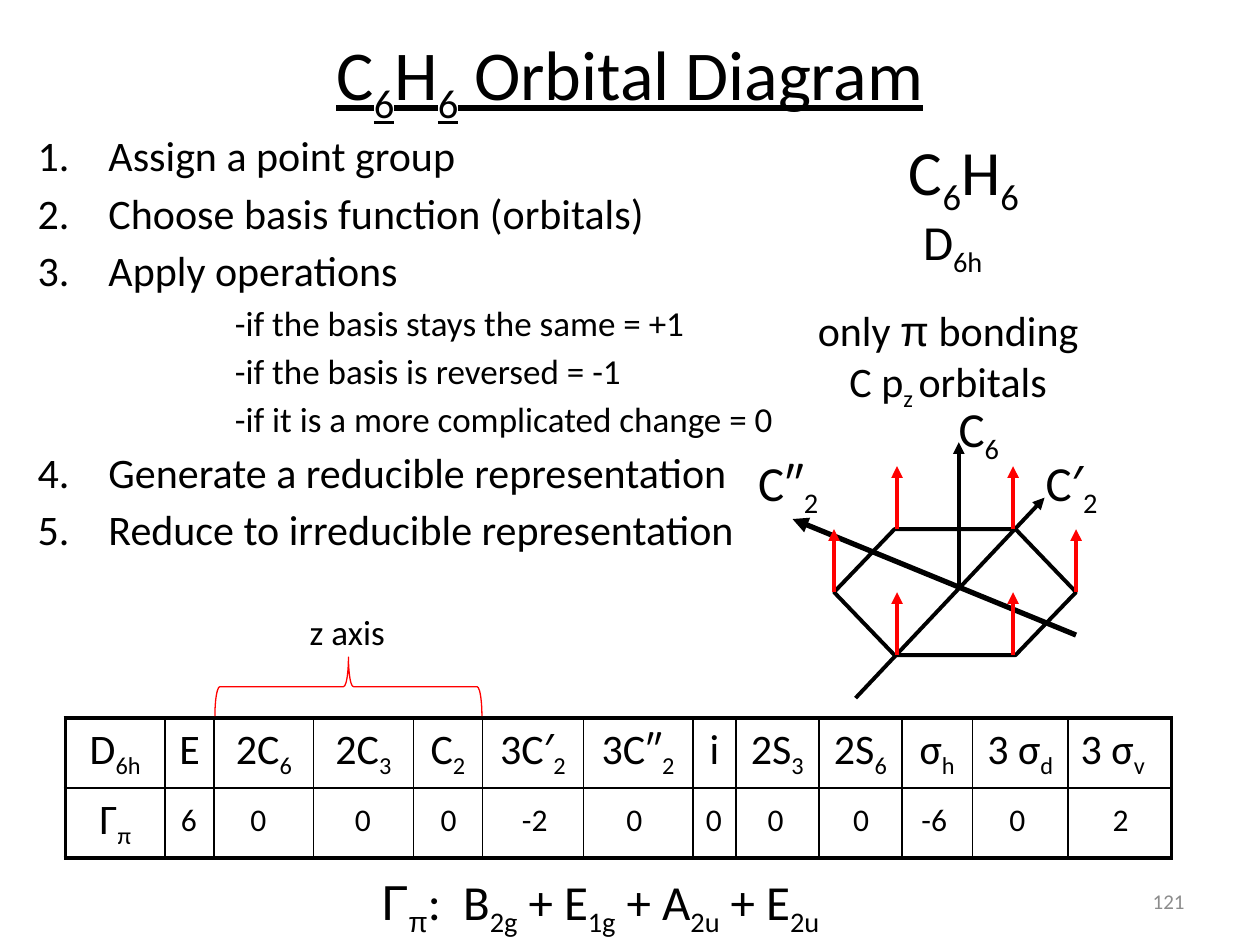
"""Build a slide on the orbital diagram of benzene."""
from lxml import etree
from pptx import Presentation
from pptx import util as u
from pptx.dml import color
from pptx.enum import shapes, text
from pptx.oxml import ns

Pt = u.Pt
ink = color.RGBColor.from_string
LEFT, MID, RIGHT = text.PP_ALIGN.LEFT, text.PP_ALIGN.CENTER, text.PP_ALIGN.RIGHT


def write(para, words, size, align=LEFT, hue="000000"):
    """Fill a paragraph: _x_ is a subscript, |x| is set in Arial."""
    para.alignment = align
    for i, part in enumerate(words.split("|")):
        for j, bit in enumerate(part.split("_")):
            if not bit:
                continue
            run = para.add_run()
            run.text = bit
            font = run.font
            font.size, font.name = Pt(size), "Arial" if i % 2 else "Calibri"
            font.color.rgb = ink(hue)
            if j % 2:
                font._element.set("baseline", "-25000")


def box(x, y, w, h, rows, size, align=MID, hue="000000"):
    """Add a text box with one paragraph for each row."""
    frame = slide.shapes.add_textbox(Pt(x), Pt(y), Pt(w), Pt(h)).text_frame
    frame.word_wrap = True
    for i, row in enumerate(rows):
        para = frame.add_paragraph() if i else frame.paragraphs[0]
        write(para, row, size, align, hue)
    return frame


deck = Presentation()
deck.slide_width, deck.slide_height = Pt(720), Pt(540)
slide = deck.slides.add_slide(deck.slide_layouts[6])

title = box(36, 0, 648, 90, ["C_6_H_6_ Orbital Diagram"], 40)
title.vertical_anchor = text.MSO_ANCHOR.MIDDLE
for run in title.paragraphs[0].runs:
    run.font.underline = True
page = box(516, 500.5, 168, 28.8, ["121"], 12, RIGHT, "8C8C8C")
page.vertical_anchor = text.MSO_ANCHOR.MIDDLE

box(500.4, 72, 100.8, 51, ["C_6_H_6_"], 36)
box(441.4, 117.4, 206, 41, ["D_6h_"], 28)
box(402.5, 170.6, 278.6, 65.5, ["only |π| bonding", "C p_z _orbitals"], 24)
box(183.6, 494.6, 319, 41, ["|Γ_π|:  B_2g_ + E_1g_ + A_2u_ + E_2u_"], 28)
box(169.9, 345.6, 62, 31.7, ["z axis"], 20, LEFT)

steps = [
    (1, "Assign a point group"),
    (1, "Choose basis function (orbitals)"),
    (1, "Apply operations"),
    (0, "-if the basis stays the same = +1"),
    (0, "-if the basis is reversed = -1"),
    (0, "-if it is a more complicated change = 0"),
    (4, "Generate a reducible representation"),
    (4, "Reduce to irreducible representation"),
]
frame = box(14.4, 70.6, 622, 444, [], 24)
for i, (start, step) in enumerate(steps):
    para = frame.add_paragraph() if i else frame.paragraphs[0]
    size = 24 if start else 20
    write(para, step, size)
    para.space_before = Pt(round(size * 0.17, 1))
    props = para._p.get_or_add_pPr()
    props.set("marL", str(Pt(40.5 if start else 112.7)))
    props.set("indent", str(Pt(-40.5 if start else 0)))
    if start:
        num = etree.SubElement(props, ns.qn("a:buAutoNum"), type="arabicPeriod")
        if start > 1:
            num.set("startAt", str(start))

heads = ["D_6h_", "E", "2C_6_", "2C_3_", "C_2_", "3C′_2_", "3C″_2_", "i",
         "2S_3_", "2S_6_", "σ_h_", "3 σ_d_", "3 σ_v_"]
wide = [56.9, 28.1, 56.9, 56.9, 39.6, 57.6, 62.6, 24.5, 47.5, 47.5, 40.3, 54.7, 59]
last = len(heads) - 1
grid = slide.shapes.add_table(2, len(heads), Pt(37.4), Pt(410.4), Pt(sum(wide)), Pt(80)).table
grid.first_row = grid.horz_banding = False
for row in grid.rows:
    row.height = Pt(40)
for c, (head, width) in enumerate(zip(heads, wide)):
    grid.columns[c].width = Pt(width)
    for r in range(2):
        cell = grid.cell(r, c)
        label = head if r == 0 else "" if c else "Г_π_"
        write(cell.text_frame.paragraphs[0], label, 24, LEFT if c == last else MID)
        props = cell._tc.get_or_add_tcPr()
        edges = {"L": c == 0, "R": c == last, "T": r == 0, "B": r == 1}
        for side, outer in edges.items():
            edge = etree.SubElement(props, ns.qn("a:ln" + side), w=str(Pt(2.25 if outer else 1)))
            fill = etree.SubElement(edge, ns.qn("a:solidFill"))
            etree.SubElement(fill, ns.qn("a:srgbClr"), val="000000")
        cell.fill.background()

values = [(108, "6"), (147.6, "0"), (207.4, "0"), (256.3, "0"), (305.6, "-2"), (362.5, "0"),
          (407.9, "0"), (443.2, "0"), (492.1, "0"), (533.9, "-6"), (581.4, "0"), (640.4, "2")]
for x, value in values:
    box(x - 18.4, 453.4, 36.8, 28.8, [value], 18)

brace = slide.shapes.add_shape(shapes.MSO_SHAPE.LEFT_BRACE, Pt(182.2), Pt(316.1), Pt(33.8), Pt(152.6))
brace.rotation = 90
ring = slide.shapes.add_shape(shapes.MSO_SHAPE.HEXAGON, Pt(476.6), Pt(302.4), Pt(138.3), Pt(72))
ring.adjustments[0] = 0.48
for shape, hue, width in [(brace, "FF0000", 0.75), (ring, "000000", 2.25)]:
    shape.shadow.inherit = False
    shape.fill.background()
    shape.line.color.rgb, shape.line.width = ink(hue), Pt(width)

arrows = [
    (614.9, 362.9, 452.9, 296.6, "000000", 3),
    (488.9, 398.9, 596.9, 284.4, "000000", 2.25),
    (547.9, 334.1, 547.9, 252.7, "000000", 2.25),
]
feet = [(512.6, 302.4), (578.9, 302.4), (476.6, 338.4), (614.9, 338.4), (512.6, 374.4), (578.9, 374.4)]
arrows += [(x, y, x, y - 36, "FF0000", 2.25) for x, y in feet]
for x, y, tip, top, hue, width in arrows:
    arrow = slide.shapes.add_connector(shapes.MSO_CONNECTOR.STRAIGHT, Pt(x), Pt(y), Pt(tip), Pt(top))
    arrow.line.color.rgb, arrow.line.width = ink(hue), Pt(width)
    etree.SubElement(arrow.line._get_or_add_ln(), ns.qn("a:tailEnd"), type="triangle")
    etree.SubElement(arrow._element.spPr, ns.qn("a:effectLst"))

for x, y, axis in [(590.4, 254.9, "C′_2_"), (426.2, 254.9, "C″_2_"), (540.7, 223.9, "C_6_")]:
    box(x, y, 54, 41, [axis], 28, LEFT)

deck.save("out.pptx")
